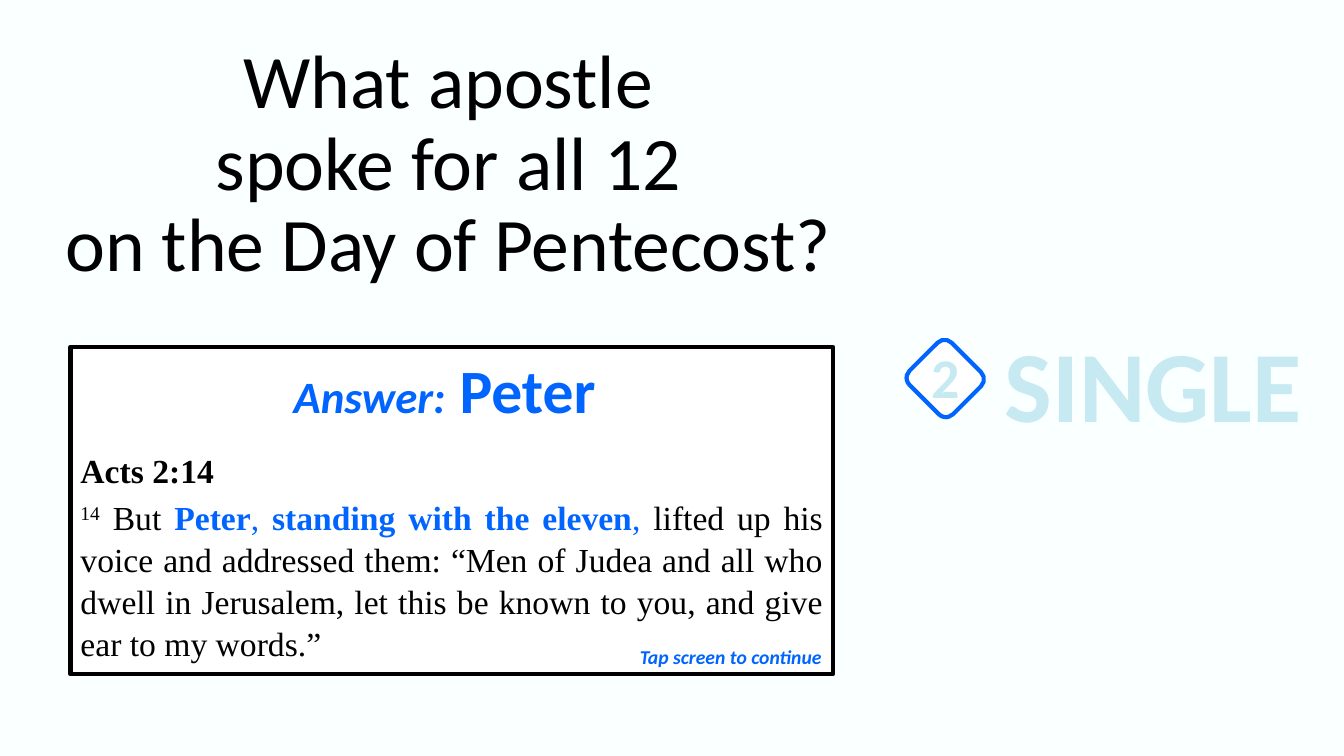
"""Build a quiz slide with a question, its answer and a score badge."""
from pptx import Presentation
from pptx.dml.color import RGBColor
from pptx.enum.shapes import MSO_SHAPE
from pptx.enum.text import MSO_ANCHOR, PP_ALIGN
from pptx.util import Inches, Pt

RECTANGLE, ROUNDED = MSO_SHAPE.RECTANGLE, MSO_SHAPE.ROUNDED_RECTANGLE
LEFT, CENTER, RIGHT, JUSTIFY = PP_ALIGN.LEFT, PP_ALIGN.CENTER, PP_ALIGN.RIGHT, PP_ALIGN.JUSTIFY
TOP = MSO_ANCHOR.TOP

COLORS = {"background": "FAFFFF", "ink": "000000", "accent": "0064FF",
          "pale": "C6E9F2", "panel": "FFFFFF"}
SANS, SERIF = "Calibri", "Times New Roman"

QUESTION_STYLE = {"size": 54}
ANSWER_STYLE = {"color": "accent", "bold": True}
VERSE_STYLE = {"font": SERIF, "size": 24}
KEY_STYLE = {**VERSE_STYLE, "color": "accent"}
BOLD_KEY_STYLE = {**KEY_STYLE, "bold": True}

QUESTION = [
    {"align": CENTER, "line_spacing": 0.9, "runs": [(line, QUESTION_STYLE)]}
    for line in ("What apostle", "spoke for all 12", "on the Day of Pentecost?")
]
ANSWER = [
    {"align": CENTER, "runs": [
        ("Answer:", {**ANSWER_STYLE, "size": 32, "italic": True}),
        (" ", {**ANSWER_STYLE, "size": 44, "italic": True}),
        ("Peter ", {**ANSWER_STYLE, "size": 44}),
    ]},
    {"align": LEFT, "space_before": 17, "space_after": 4,
     "runs": [("Acts 2:14", {**VERSE_STYLE, "bold": True})]},
    {"align": JUSTIFY, "line_spacing": 1.04, "runs": [
        ("14", {**VERSE_STYLE, "raised": True}),
        (" But ", VERSE_STYLE),
        ("Peter", BOLD_KEY_STYLE),
        (", ", KEY_STYLE),
        ("standing with the eleven", BOLD_KEY_STYLE),
        (", ", KEY_STYLE),
        ("lifted up his voice and addressed them: “Men of Judea and all who dwell "
         "in Jerusalem, let this be known to you, and give ear to my words.”", VERSE_STYLE),
    ]},
]
POINTS = [{"align": CENTER, "runs": [("2", {"size": 40, "color": "pale", "bold": True})]}]
HINT = [{"align": RIGHT, "runs": [
    ("Tap screen to continue", {**ANSWER_STYLE, "size": 14, "italic": True})]}]
HIT = [{"align": CENTER, "runs": [("SINGLE", {"size": 72, "color": "pale", "bold": True})]}]

QUESTION_BOX = (0.25, 0.38, 8.39, 2.55)
ANSWER_BOX = (0.7, 3.44, 7.56, 3.25)
BADGE_BOX = (9.07, 3.46, 0.61, 0.59)
POINTS_BOX = (9.13, 3.35, 0.49, 0.77)
HINT_BOX = (6.14, 6.35, 2.11, 0.34)
HIT_BOX = (9.84, 3.14, 3.2, 1.32)


def rgb(name):
    return RGBColor.from_string(COLORS[name])


def write(frame, paragraphs, wrap=True):
    frame.word_wrap = wrap
    frame.vertical_anchor = TOP
    for index, content in enumerate(paragraphs):
        paragraph = frame.add_paragraph() if index else frame.paragraphs[0]
        paragraph.alignment = content["align"]
        paragraph.line_spacing = content.get("line_spacing", 1.0)
        paragraph.space_before = Pt(content.get("space_before", 0))
        paragraph.space_after = Pt(content.get("space_after", 0))
        for words, style in content["runs"]:
            run = paragraph.add_run()
            run.text = words
            run.font.name = style.get("font", SANS)
            run.font.size = Pt(style["size"])
            run.font.bold = style.get("bold", False)
            run.font.italic = style.get("italic", False)
            run.font.color.rgb = rgb(style.get("color", "ink"))
            if style.get("raised"):
                run.font._element.set("baseline", "30000")


def add_text(slide, box, paragraphs, wrap=True):
    write(slide.shapes.add_textbox(*map(Inches, box)).text_frame, paragraphs, wrap)


def add_panel(slide, preset, box, outline):
    panel = slide.shapes.add_shape(preset, *map(Inches, box))
    panel.shadow.inherit = False
    panel.fill.solid()
    panel.fill.fore_color.rgb = rgb("panel")
    panel.line.color.rgb = rgb(outline)
    panel.line.width = Pt(3)
    return panel


def main():
    deck = Presentation()
    deck.slide_width, deck.slide_height = Inches(13.33), Inches(7.5)
    slide = deck.slides.add_slide(deck.slide_layouts[6])
    slide.background.fill.solid()
    slide.background.fill.fore_color.rgb = rgb("background")

    add_text(slide, QUESTION_BOX, QUESTION)
    answer = add_panel(slide, RECTANGLE, ANSWER_BOX, "ink")
    write(answer.text_frame, ANSWER)
    badge = add_panel(slide, ROUNDED, BADGE_BOX, "accent")
    badge.rotation = 45
    add_text(slide, POINTS_BOX, POINTS, wrap=False)
    add_text(slide, HINT_BOX, HINT)
    add_text(slide, HIT_BOX, HIT, wrap=False)
    deck.save("out.pptx")


if __name__ == "__main__":
    main()
